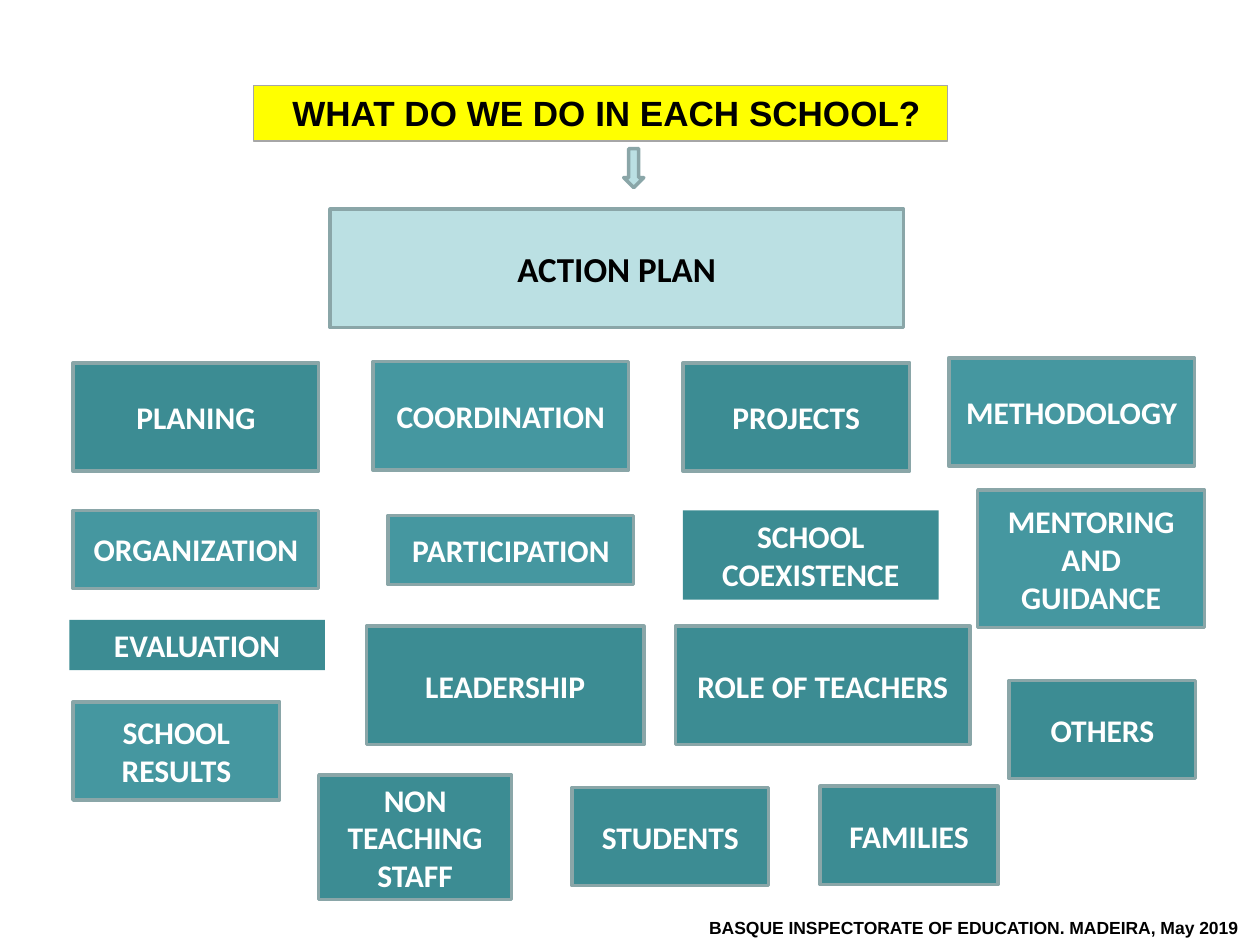
from pptx import Presentation
from pptx.dml.color import RGBColor
from pptx.enum.shapes import MSO_SHAPE as SHAPE
from pptx.enum.text import MSO_ANCHOR as ANCHOR, MSO_AUTO_SIZE as AUTO, PP_ALIGN as ALIGN
from pptx.util import Inches, Pt

COLORS = {
    "black": "000000", "white": "FFFFFF", "yellow": "FFFF00", "gray": "A6A6A6",
    "pale": "BBE0E3", "border": "8AA6A8", "teal": "4597A0", "dark": "3C8C93",
}

TOPICS = [
    ("METHODOLOGY", 7.53, 2.84, 1.95, 0.86, "teal"),
    ("ROLE OF TEACHERS", 5.36, 4.97, 2.34, 0.94, "dark"),
    ("ORGANIZATION", 0.58, 4.05, 1.95, 0.62, "teal"),
    ("SCHOOL RESULTS", 0.58, 5.57, 1.64, 0.78, "teal"),
    ("COORDINATION", 2.96, 2.87, 2.03, 0.86, "teal"),
    ("PARTICIPATION", 3.08, 4.09, 1.95, 0.55, "teal"),
    ("LEADERSHIP", 2.91, 4.97, 2.2, 0.94, "dark"),
    ("PLANING", 0.58, 2.88, 1.95, 0.86, "dark"),
    ("STUDENTS", 4.54, 6.25, 1.56, 0.78, "dark"),
    ("OTHERS", 8.01, 5.4, 1.48, 0.78, "dark"),
    ("FAMILIES", 6.51, 6.24, 1.41, 0.78, "dark"),
    ("PROJECTS", 5.42, 2.88, 1.8, 0.86, "dark"),
    ("NON TEACHING STAFF", 2.53, 6.15, 1.53, 0.99, "dark"),
    ("MENTORING AND GUIDANCE", 7.76, 3.89, 1.8, 1.09, "teal"),
]

PLAIN_TOPICS = [
    ("SCHOOL COEXISTENCE", 5.42, 4.05, 2.03, 0.71, "dark"),
    ("EVALUATION", 0.55, 4.92, 2.03, 0.4, "dark"),
]


def rgb(name):
    return RGBColor.from_string(COLORS[name])


def add_block(s, kind, x, y, w, h, fill, line="border", width=2):
    sp = s.shapes.add_shape(kind, Inches(x), Inches(y), Inches(w), Inches(h))
    sp.shadow.inherit = False
    sp.fill.solid()
    sp.fill.fore_color.rgb = rgb(fill)
    if line:
        sp.line.color.rgb = rgb(line)
        sp.line.width = Pt(width)
    else:
        sp.line.fill.background()
    return sp


def write(sp, text, size, color="white", font="Calibri", align=ALIGN.CENTER,
          anchor=ANCHOR.MIDDLE, wrap=True):
    tf = sp.text_frame
    tf.word_wrap = wrap
    tf.vertical_anchor = anchor
    p = tf.paragraphs[0]
    p.alignment = align
    r = p.add_run()
    r.text = text
    r.font.name = font
    r.font.size = Pt(size)
    r.font.bold = True
    r.font.color.rgb = rgb(color)
    return tf


def add_topic(s, text, x, y, w, h, fill, line="border"):
    sp = add_block(s, SHAPE.RECTANGLE, x, y, w, h, fill, line)
    write(sp, text, 18)


def add_title(s):
    sp = add_block(s, SHAPE.RECTANGLE, 2.01, 0.68, 5.51, 0.44, "yellow", "gray", 0.75)
    tf = write(sp, "WHAT DO WE DO IN EACH SCHOOL?", 20, "black", "Arial",
               ALIGN.LEFT, ANCHOR.TOP)
    tf.margin_left = Inches(0.31)


def add_footer(s):
    sp = s.shapes.add_textbox(Inches(5.53), Inches(7.23), Inches(4.47), Inches(0.27))
    tf = write(sp, "BASQUE INSPECTORATE OF EDUCATION. MADEIRA, May 2019", 10, "black",
               "Arial", ALIGN.LEFT, ANCHOR.TOP, wrap=False)
    tf.auto_size = AUTO.SHAPE_TO_FIT_TEXT


def main():
    """Build the school action plan slide."""
    prs = Presentation()
    prs.slide_width, prs.slide_height = Inches(10), Inches(7.5)
    s = prs.slides.add_slide(prs.slide_layouts[6])
    add_footer(s)
    add_title(s)
    add_block(s, SHAPE.DOWN_ARROW, 4.95, 1.18, 0.16, 0.31, "pale")
    plan = add_block(s, SHAPE.RECTANGLE, 2.62, 1.66, 4.55, 0.94, "pale")
    write(plan, "ACTION PLAN", 20, "black")
    for topic in TOPICS:
        add_topic(s, *topic)
    for topic in PLAIN_TOPICS:
        add_topic(s, *topic, line=None)
    prs.save("out.pptx")


if __name__ == "__main__":
    main()
